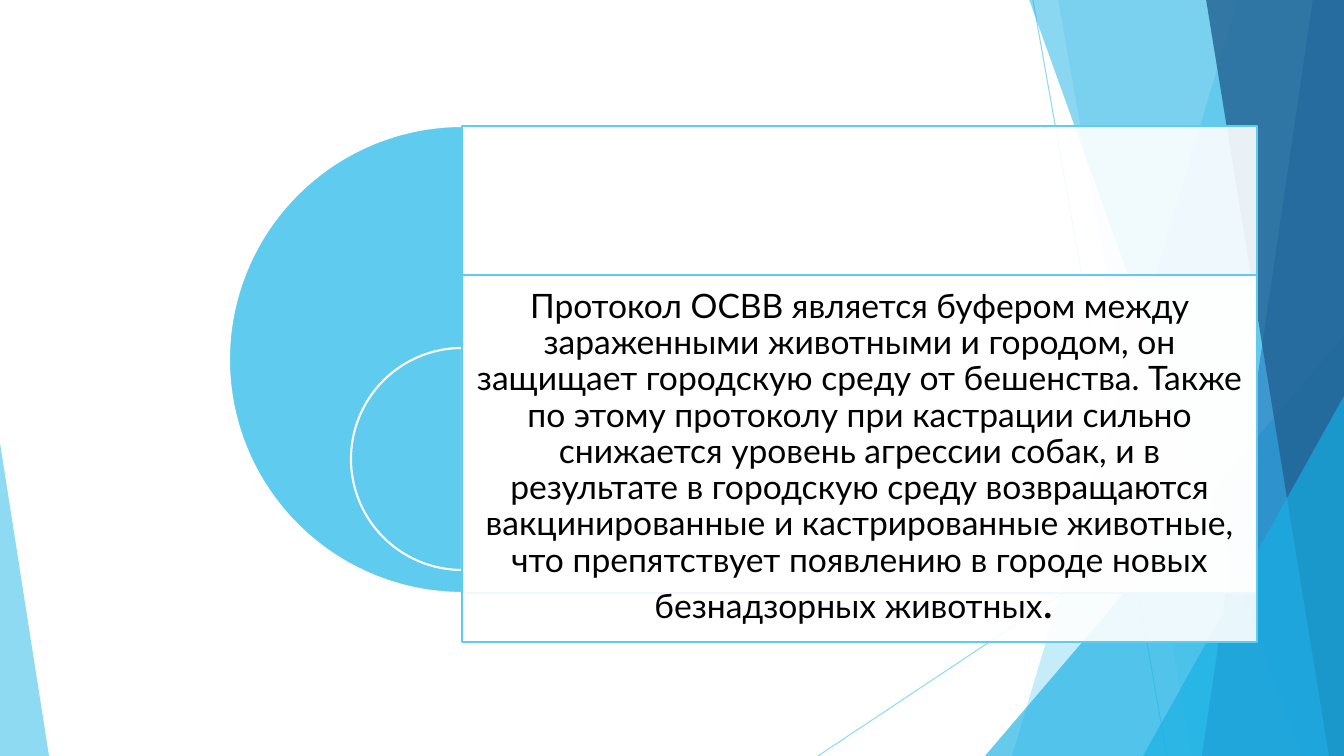
import pptx
import pptx.util
import pptx.dml.color
import pptx.enum.shapes
import pptx.enum.text
import pptx.oxml.ns
import lxml.etree

RGB = pptx.dml.color.RGBColor
SHAPE = pptx.enum.shapes.MSO_SHAPE
qn = pptx.oxml.ns.qn

SKY = RGB(0x5F, 0xCB, 0xEF)
CYAN = RGB(0x17, 0xB0, 0xE4)
BLUE = RGB(0x2E, 0x83, 0xC3)
NAVY = RGB(0x22, 0x62, 0x92)
WHITE = RGB(0xFF, 0xFF, 0xFF)
BLACK = RGB(0, 0, 0)

SCALE = 914400 / 100.8
WIDE, HIGH = 1344, 756
TEXT = (
    "Протокол ОСВВ является буфером между зараженными животными и городом, "
    "он защищает городскую среду от бешенства. Также по этому протоколу при "
    "кастрации сильно снижается уровень агрессии собак, и в результате в "
    "городскую среду возвращаются вакцинированные и кастрированные животные, "
    "что препятствует появлению в городе новых безнадзорных животных"
)


def emu(px):
    return round(px * SCALE)


def fade(fill, alpha):
    """Set the opacity, in percent, of a solid fill."""
    color = fill._xPr.find(qn("a:solidFill"))[0]
    lxml.etree.SubElement(color, qn("a:alpha")).set("val", str(alpha * 1000))


class Page:
    font = "Lato"

    def __init__(self, slide):
        self.shapes = slide.shapes

    def paint(self, shape, fill, alpha=100, line=None):
        shape.shadow.inherit = False
        shape.fill.solid()
        shape.fill.fore_color.rgb = fill
        if alpha < 100:
            fade(shape.fill, alpha)
        if line is None:
            shape.line.fill.background()
        else:
            shape.line.color.rgb = line
            shape.line.width = pptx.util.Pt(1.5)
        return shape

    def line(self, *ends):
        link = self.shapes.add_connector(
            pptx.enum.shapes.MSO_CONNECTOR.STRAIGHT, *map(emu, ends))
        link.line.color.rgb = SKY
        link.line.width = pptx.util.Pt(0.75)
        fade(link.line.fill, 70)
        lxml.etree.SubElement(link._element.spPr, qn("a:effectLst"))

    def band(self, top, foot, fill, alpha):
        """Fill from a slanted left edge to the right side of the slide."""
        pen = self.shapes.build_freeform(top, -1, scale=SCALE)
        pen.add_line_segments([(WIDE, -1), (WIDE, HIGH), (foot, HIGH)])
        self.paint(pen.convert_to_shape(), fill, alpha)

    def shape(self, kind, box, fill, alpha=100, line=None, turns=()):
        shape = self.shapes.add_shape(kind, *map(emu, box))
        for i, turn in enumerate(turns):
            shape.adjustments[i] = turn
        return self.paint(shape, fill, alpha, line)

    def wedge(self, box, tip, fill, alpha):
        self.shape(SHAPE.ISOSCELES_TRIANGLE, box, fill, alpha, turns=[tip])

    def half(self, left, top, size):
        """Draw the left half of a disc."""
        self.shape(SHAPE.PIE, (left, top, size, size), SKY, line=WHITE,
                   turns=(54, 162))

    def panel(self, top, high):
        return self.shape(SHAPE.RECTANGLE, (462, top, 795, high), WHITE, 90, SKY)

    def label(self, shape, runs):
        frame = shape.text_frame
        frame.word_wrap = True
        frame.vertical_anchor = pptx.enum.text.MSO_ANCHOR.MIDDLE
        frame.margin_left = frame.margin_right = emu(10)
        frame.margin_top = frame.margin_bottom = emu(10)
        para = frame.paragraphs[0]
        para.alignment = pptx.enum.text.PP_ALIGN.CENTER
        para.line_spacing = 0.9
        para.font.name = self.font
        para.font.color.rgb = BLACK
        for text, size in runs:
            run = para.add_run()
            run.text = text
            run.font.size = pptx.util.Pt(size)


def main():
    deck = pptx.Presentation()
    deck.slide_width, deck.slide_height = emu(WIDE), emu(HIGH)
    page = Page(deck.slides.add_slide(deck.slide_layouts[6]))

    page.line(1033, 0, 1167, HIGH)
    page.line(WIDE, 406, 818, HIGH)
    page.band(1238, 1012, SKY, 36)
    page.band(1058, 1192, SKY, 20)
    page.wedge((985, 336, 359, 420), 1, CYAN, 66)
    page.band(1029, 1301, CYAN, 50)
    page.band(1313, 1202, BLUE, 70)
    page.band(1206, 1329, NAVY, 80)
    page.wedge((1143, 396, 201, 360), 1, CYAN, 66)
    page.wedge((0, 443, 49, 313), 0, SKY, 70)

    page.half(229, 126, 467)
    page.panel(126, 467)
    page.half(351, 348, 222)
    page.label(page.panel(275, 367), [(TEXT, 24), (". ", 32)])

    deck.save("out.pptx")


if __name__ == "__main__":
    main()
